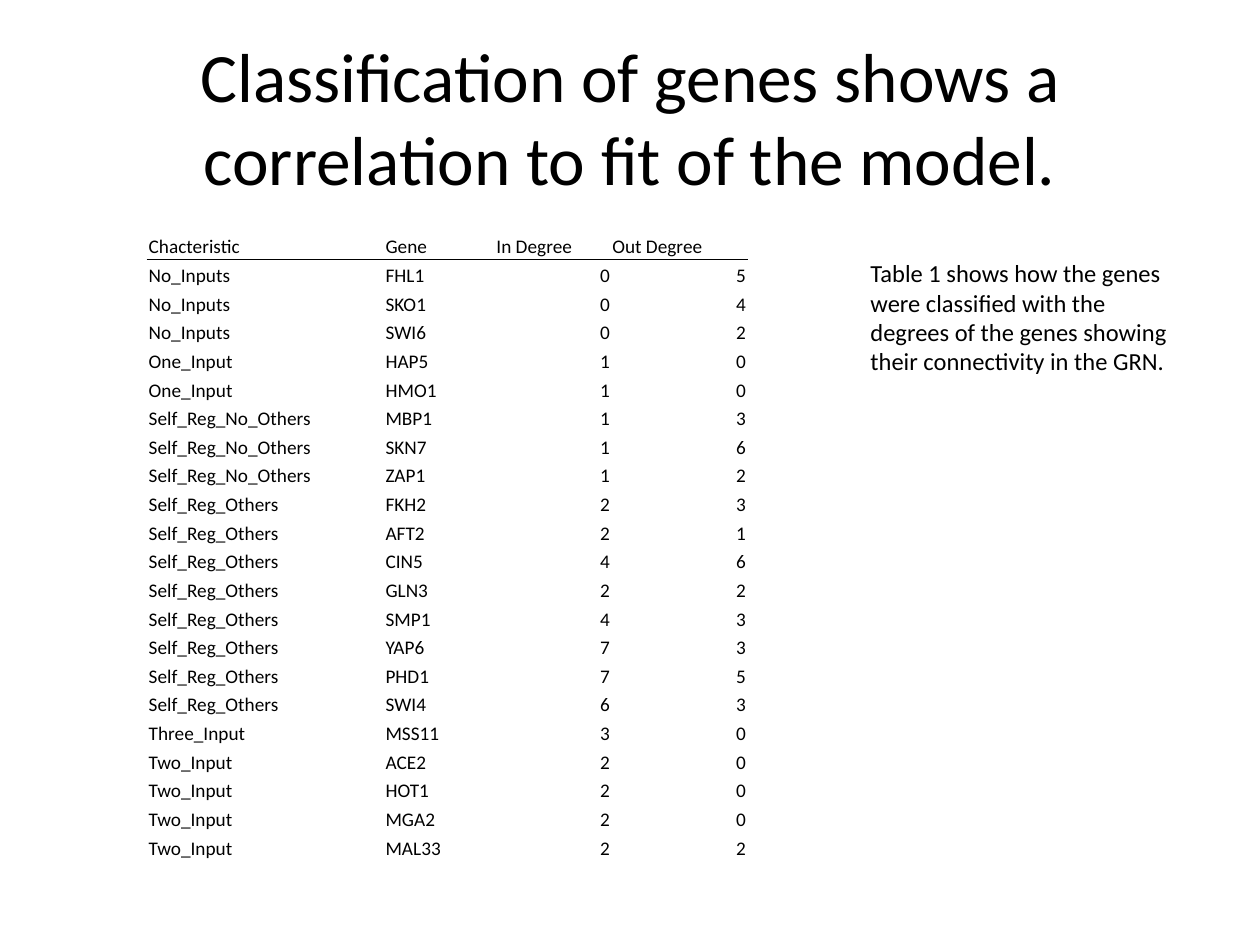
import pptx
import pptx.dml.color
import pptx.enum.text
import pptx.oxml
import pptx.oxml.ns
import pptx.util
from pptx.util import Inches

ALIGN = pptx.enum.text.PP_ALIGN
ANCHOR = pptx.enum.text.MSO_ANCHOR
AUTO_SIZE = pptx.enum.text.MSO_AUTO_SIZE

BLACK = "000000"
HEADINGS = ("Chacteristic", "Gene", "In Degree", "Out Degree")
COLUMN_WIDTHS = (1.88, 0.88, 0.92, 1.08)
# Characteristic: (gene, in degree, out degree)
GENES_BY_CHARACTERISTIC = {
    "No_Inputs": [("FHL1", 0, 5), ("SKO1", 0, 4), ("SWI6", 0, 2)],
    "One_Input": [("HAP5", 1, 0), ("HMO1", 1, 0)],
    "Self_Reg_No_Others": [("MBP1", 1, 3), ("SKN7", 1, 6), ("ZAP1", 1, 2)],
    "Self_Reg_Others": [
        ("FKH2", 2, 3), ("AFT2", 2, 1), ("CIN5", 4, 6), ("GLN3", 2, 2),
        ("SMP1", 4, 3), ("YAP6", 7, 3), ("PHD1", 7, 5), ("SWI4", 6, 3),
    ],
    "Three_Input": [("MSS11", 3, 0)],
    "Two_Input": [("ACE2", 2, 0), ("HOT1", 2, 0), ("MGA2", 2, 0), ("MAL33", 2, 2)],
}
CELL_FORMAT = {
    "margin_left": Inches(0.01),
    "margin_right": Inches(0.01),
    "margin_top": Inches(0.01),
    "margin_bottom": 0,
    "vertical_anchor": ANCHOR.BOTTOM,
}


def rgb(hex_color):
    return pptx.dml.color.RGBColor.from_string(hex_color)


def apply_format(target, values):
    for name, value in values.items():
        setattr(target, name, value)


def write_text(frame, text, size, align=ALIGN.LEFT):
    paragraph = frame.paragraphs[0]
    paragraph.alignment = align
    run = paragraph.add_run()
    run.text = text
    apply_format(run.font, {"name": "Calibri", "size": pptx.util.Pt(size)})
    run.font.color.rgb = rgb(BLACK)


def add_title(slide, text):
    title = slide.shapes.title
    apply_format(title, {"left": Inches(0.5), "top": Inches(0.3),
                         "width": Inches(9), "height": Inches(1.25)})
    apply_format(title.text_frame, {"auto_size": AUTO_SIZE.NONE,
                                    "vertical_anchor": ANCHOR.MIDDLE})
    write_text(title.text_frame, text, 39.6, ALIGN.CENTER)


def add_caption(slide, text):
    caption = slide.shapes.add_textbox(Inches(6.81), Inches(2), Inches(2.58), Inches(1.04))
    apply_format(caption.text_frame, {"word_wrap": True,
                                      "auto_size": AUTO_SIZE.SHAPE_TO_FIT_TEXT})
    write_text(caption.text_frame, text, 14)


def add_border(cell, edge):
    """Rule one edge of a cell; edge is lnT or lnB."""
    width = pptx.util.Pt(0.5)
    border = pptx.oxml.parse_xml(
        f'<a:{edge} {pptx.oxml.ns.nsdecls("a")} w="{int(width)}">'
        f'<a:solidFill><a:srgbClr val="{BLACK}"/></a:solidFill></a:{edge}>'
    )
    cell._tc.get_or_add_tcPr().append(border)


def add_gene_table(slide):
    rows = [HEADINGS] + [
        (characteristic, *gene)
        for characteristic, genes in GENES_BY_CHARACTERISTIC.items()
        for gene in genes
    ]
    table = slide.shapes.add_table(
        len(rows), len(HEADINGS), Inches(1.17), Inches(1.83),
        Inches(sum(COLUMN_WIDTHS)), Inches(5),
    ).table
    apply_format(table, {"first_row": False, "horz_banding": False})
    for column, width in zip(table.columns, COLUMN_WIDTHS):
        column.width = Inches(width)

    header_rule = {0: "lnB", 1: "lnT"}
    for row_index, row in enumerate(rows):
        for column_index, value in enumerate(row):
            cell = table.cell(row_index, column_index)
            apply_format(cell, CELL_FORMAT)
            if row_index in header_rule:
                add_border(cell, header_rule[row_index])
            cell.fill.background()
            align = ALIGN.RIGHT if isinstance(value, int) else ALIGN.LEFT
            write_text(cell.text_frame, str(value), 11, align)


def main():
    deck = pptx.Presentation()
    apply_format(deck, {"slide_width": Inches(10), "slide_height": Inches(7.5)})
    title_only = deck.slide_layouts[5]
    slide = deck.slides.add_slide(title_only)
    add_title(slide, "Classification of genes shows a correlation to fit of the model.")
    add_caption(slide, "Table 1 shows how the genes were classified with the degrees "
                       "of the genes showing their connectivity in the GRN.")
    add_gene_table(slide)
    deck.save("out.pptx")


if __name__ == "__main__":
    main()
